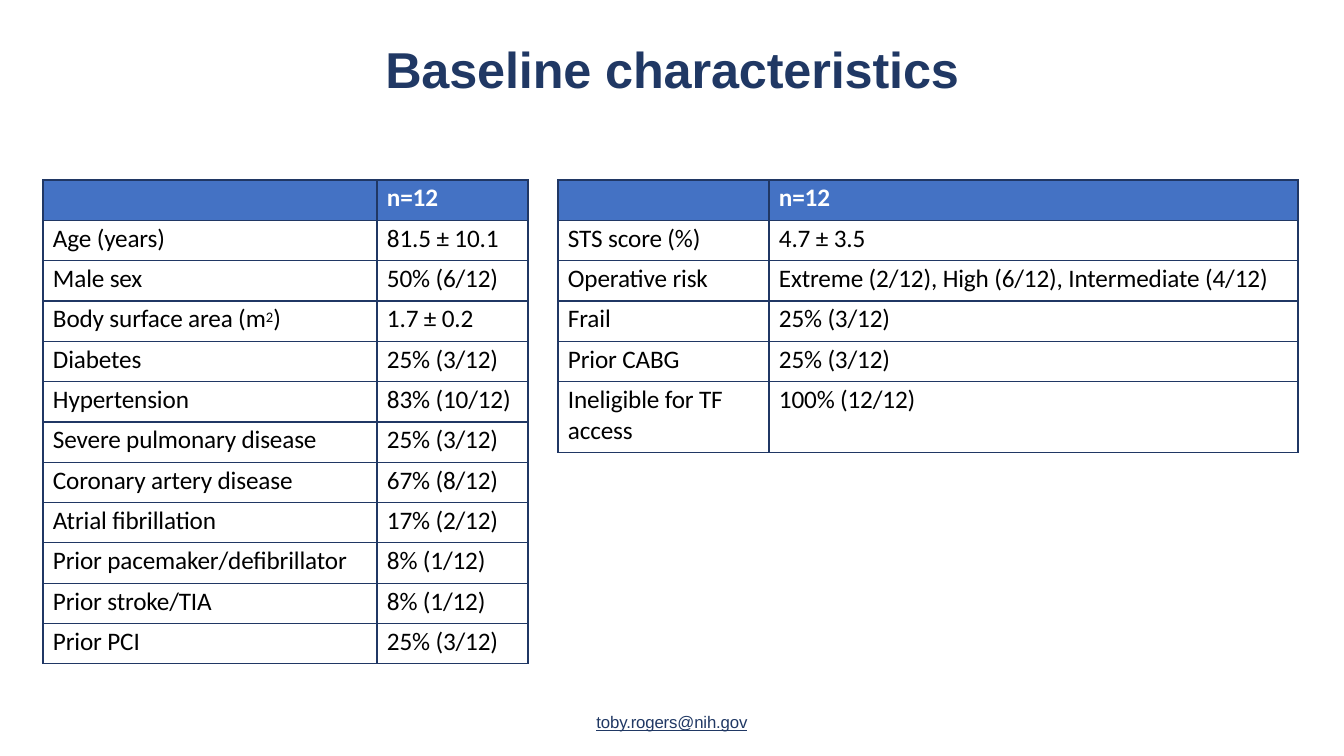
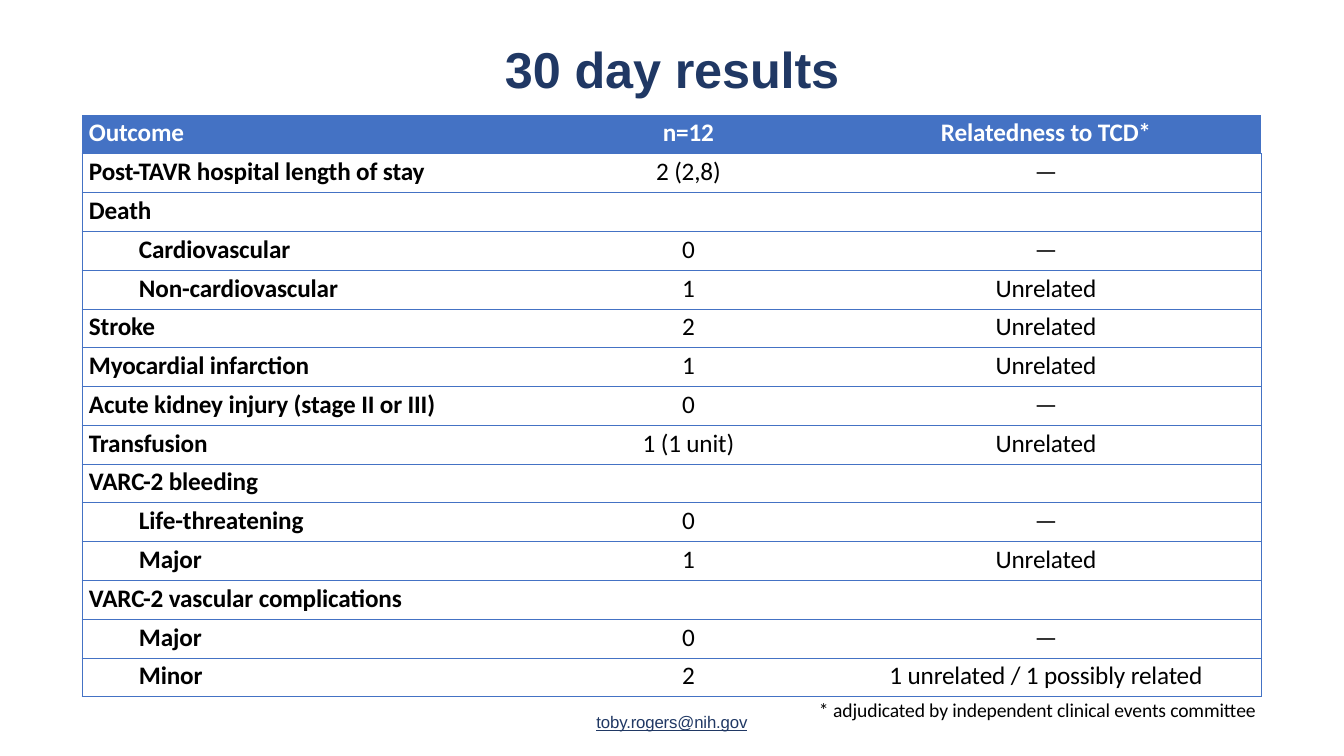
from lxml import etree
from pptx import Presentation
from pptx.dml.color import RGBColor
from pptx.enum import text
from pptx.oxml import ns
from pptx.util import Pt

PX = 914400 / 100.8
SLIDE_WIDTH, SLIDE_HEIGHT = 1344, 756
NAVY = RGBColor(0x20, 0x38, 0x64)
GRID_NAVY = RGBColor(0x20, 0x37, 0x64)
BLUE = RGBColor(0x44, 0x72, 0xC4)
WHITE = RGBColor(0xFF, 0xFF, 0xFF)
BLACK = RGBColor(0x00, 0x00, 0x00)
NO_STYLE_NO_GRID = "{2D5ABB26-0587-4C30-8999-92F81FD0307C}"


def write(paragraph, words, size, face, color, bold=False, underline=False, spacing=-10):
    run = paragraph.add_run()
    run.text = words
    run.font.size = Pt(size)
    run.font.name = face
    run.font.color.rgb = color
    run.font.bold = bold
    run.font.underline = underline
    run.font._element.set("spc", str(spacing))
    return run


def draw_table(slide, left, top, widths, heights, rows, line, weight, insets, ruled=False):
    frame = slide.shapes.add_table(
        len(rows), len(widths), round(left * PX), round(top * PX),
        round(sum(widths) * PX), round(sum(heights) * PX))
    table = frame.table
    table._tbl.tblPr[0].text = NO_STYLE_NO_GRID
    table.horz_banding = False
    for column, width in zip(table.columns, widths):
        column.width = round(width * PX)
    for r, (row, height) in enumerate(zip(rows, heights)):
        table.rows[r].height = round(height * PX)
        header, spanning = r == 0, len(row) == 1
        if spanning:
            table.cell(r, 0).merge(table.cell(r, len(widths) - 1))
        for c, words in enumerate(row):
            cell = table.cell(r, c)
            nested = words.startswith(">")
            cell.margin_left = round((insets[c] + 50 * nested) * PX)
            cell.margin_right = cell.margin_bottom = 0
            cell.margin_top = round(3 * PX)
            cell.vertical_anchor = text.MSO_ANCHOR.TOP
            edges = "LRTB"
            if ruled and not spanning:
                edges = "" if header else ("L" * (c == 0) + "R" * (c == len(widths) - 1) + "TB")
            for edge in "LRTB":
                border = etree.SubElement(cell._tc.get_or_add_tcPr(), ns.qn(f"a:ln{edge}"))
                if edge in edges:
                    border.set("w", str(Pt(weight)))
                    solid = etree.SubElement(border, ns.qn("a:solidFill"))
                    etree.SubElement(solid, ns.qn("a:srgbClr")).set("val", str(line))
                else:
                    etree.SubElement(border, ns.qn("a:noFill"))
            if header:
                cell.fill.solid()
                cell.fill.fore_color.rgb = BLUE
            else:
                cell.fill.background()
            paragraph = cell.text_frame.paragraphs[0]
            centred = ruled and c > 0
            paragraph.alignment = text.PP_ALIGN.CENTER if centred else text.PP_ALIGN.LEFT
            for k, piece in enumerate(words.lstrip(">").split("^")):
                if piece:
                    run = write(paragraph, piece, 18, "Calibri", WHITE if header else BLACK,
                                bold=header or (ruled and c == 0))
                    if k % 2:
                        run.font._element.set("baseline", "23000")


deck = Presentation()
deck.slide_width = round(SLIDE_WIDTH * PX)
deck.slide_height = round(SLIDE_HEIGHT * PX)

slides = []
for heading, heading_width in [("Baseline characteristics", 580), ("30 day results", 339)]:
    slide = deck.slides.add_slide(deck.slide_layouts[5])
    slides.append(slide)
    title = slide.shapes.title
    email = slide.shapes.add_textbox(0, 0, 0, 0)
    for box, words, top, width, height, size in [
        (title, heading, 37, heading_width, 63, 36),
        (email, "toby.rogers@nih.gov", 711, 156, 21, 12),
    ]:
        box.left = round((SLIDE_WIDTH - width) / 2 * PX)
        box.top, box.width, box.height = round(top * PX), round(width * PX), round(height * PX)
        frame = box.text_frame
        frame.margin_left = frame.margin_right = frame.margin_bottom = 0
        frame.margin_top = round(1 * PX)
        frame.auto_size = text.MSO_AUTO_SIZE.NONE
        frame.vertical_anchor = text.MSO_ANCHOR.TOP
        frame.word_wrap = False
        frame.paragraphs[0].alignment = text.PP_ALIGN.CENTER
        write(frame.paragraphs[0], words, size, "Arial", NAVY,
              bold=box is title, underline=box is email)
baseline, results = slides

history = [
    ("", "n=12"),
    ("Age (years)", "81.5 ± 10.1"),
    ("Male sex", "50% (6/12)"),
    ("Body surface area (m^2^)", "1.7 ± 0.2"),
    ("Diabetes", "25% (3/12)"),
    ("Hypertension", "83% (10/12)"),
    ("Severe pulmonary disease", "25% (3/12)"),
    ("Coronary artery disease", "67% (8/12)"),
    ("Atrial fibrillation", "17% (2/12)"),
    ("Prior pacemaker/defibrillator", "8% (1/12)"),
    ("Prior stroke/TIA", "8% (1/12)"),
    ("Prior PCI", "25% (3/12)"),
]
risk = [
    ("", "n=12"),
    ("STS score (%)", "4.7 ± 3.5"),
    ("Operative risk", "Extreme (2/12), High (6/12), Intermediate (4/12)"),
    ("Frail", "25% (3/12)"),
    ("Prior CABG", "25% (3/12)"),
    ("Ineligible for TF access", "100% (12/12)"),
]
row_height = 484 / len(history)
draw_table(baseline, 43, 180, [334, 151], [row_height] * len(history), history,
           GRID_NAVY, 1, [10, 10])
draw_table(baseline, 558, 180, [211, 529], [row_height] * 5 + [71], risk,
           GRID_NAVY, 1, [10, 10])

outcomes = [
    ("Outcome", "n=12", "Relatedness to TCD*"),
    ("Post-TAVR hospital length of stay", "2 (2,8)", "—"),
    ("Death",),
    (">Cardiovascular", "0", "—"),
    (">Non-cardiovascular", "1", "Unrelated"),
    ("Stroke", "2", "Unrelated"),
    ("Myocardial infarction", "1", "Unrelated"),
    ("Acute kidney injury (stage II or III)", "0", "—"),
    ("Transfusion", "1 (1 unit)", "Unrelated"),
    ("VARC-2 bleeding",),
    (">Life-threatening", "0", "—"),
    (">Major", "1", "Unrelated"),
    ("VARC-2 vascular complications",),
    (">Major", "0", "—"),
    (">Minor", "2", "1 unrelated / 1 possibly related"),
]
draw_table(results, 82, 115, [459, 270, 450], [582 / len(outcomes)] * len(outcomes), outcomes,
           BLUE, 0.5, [7, 25, 20], ruled=True)

footnote = results.shapes.add_textbox(
    round(819 * PX), round(697 * PX), round(452 * PX), round(26 * PX)).text_frame
footnote.margin_left = footnote.margin_right = footnote.margin_bottom = 0
footnote.margin_top = round(1 * PX)
footnote.word_wrap = True
write(footnote.paragraphs[0], "* ", 14, "Calibri", BLACK, spacing=0)
write(footnote.paragraphs[0], "adjudicated by independent clinical events committee",
      14, "Calibri", BLACK)

deck.save("out.pptx")
